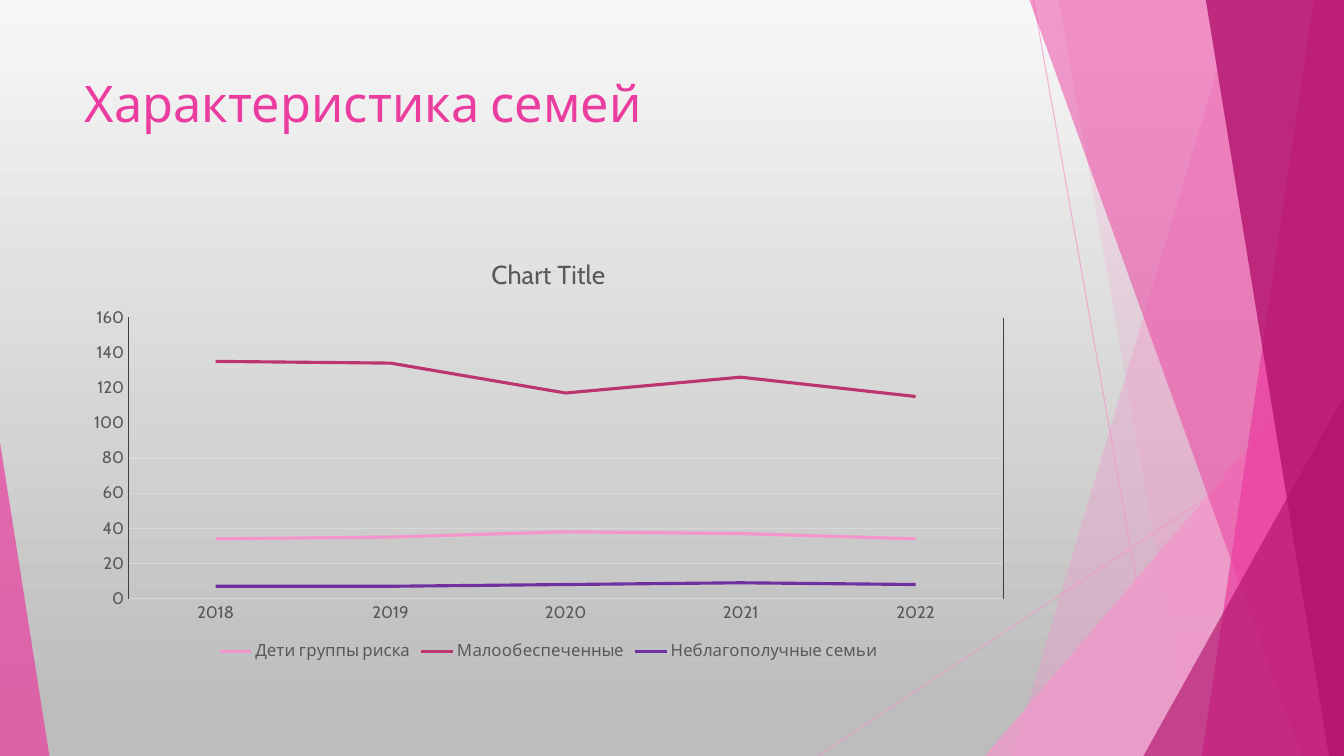
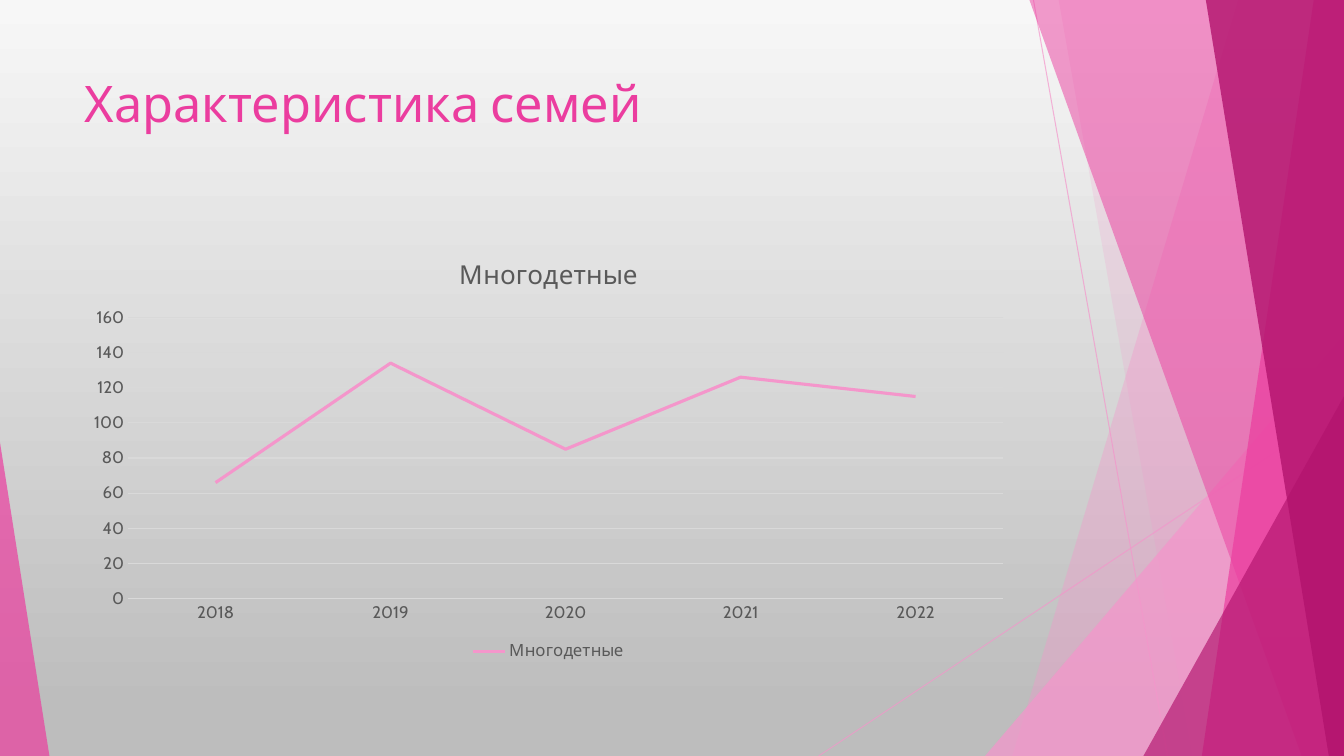
import pptx
import pptx.util
import pptx.dml.color
import pptx.chart.data
import pptx.enum.chart
import pptx.enum.shapes
import pptx.enum.text
import pptx.oxml.ns
from lxml import etree

Inches, Pt = pptx.util.Inches, pptx.util.Pt
qn = pptx.oxml.ns.qn

# Shared look
WIDTH, HEIGHT = 13.33, 7.5
FONT = "Cabin"
LIGHT, PINK, DARK = "F496CB", "EB3D9F", "B2136D"
GREY, GRID, EDGE = "595959", "D9D9D9", "404040"
BACKGROUND = [(0, "F7F7F7"), (0.94, "BDBDBD")]
TITLE_BOX = (0.74, 0.67, 9.4, 1.44)
CHART_BOX = (0.74, 2.36, 9.4, 4.24)
PLOT_BOX = (1.27, 3.15, 8.68, 2.79)

# Decoration: (from, to), (top x, bottom x, colour, alpha), (box, apex, colour, alpha)
RAYS = [((10.25, 0), (11.58, HEIGHT)), ((WIDTH, 4.03), (8.12, HEIGHT))]
BANDS_BACK = [(12.28, 10.04, LIGHT, 36), (10.5, 11.83, LIGHT, 20)]
BANDS_FRONT = [(10.21, 12.91, PINK, 50), (13.03, 11.92, PINK, 70),
               (11.96, 13.18, DARK, 80)]
TRIANGLE_BACK = ((9.77, 3.33, 3.56, 4.17), 1, LIGHT, 72)
TRIANGLES_FRONT = [((11.34, 3.93, 1.99, 3.57), 1, DARK, 66),
                   ((0, 4.39, 0.49, 3.11), 0, PINK, 70)]

# Content
YEARS = ["2018", "2019", "2020", "2021", "2022"]
PAGES = [
    {"title": "Характеристика семей", "chart_title": "Chart Title", "edges": True,
     "series": [("Дети группы риска", [34, 35, 38, 37, 34], LIGHT),
                ("Малообеспеченные", [135, 134, 117, 126, 115], "BC356F"),
                ("Неблагополучные семьи", [7, 7, 8, 9, 8], "7030A0")]},
    {"title": "Характеристика семей", "chart_title": "Многодетные", "edges": False,
     "series": [("Многодетные", [66, 134, 85, 126, 115], LIGHT)]},
]


def rgb(value):
    return pptx.dml.color.RGBColor.from_string(value)


def inches(values):
    return [Inches(value) for value in values]


def set_font(font, size, colour):
    font.name, font.size, font.bold = FONT, Pt(size), False
    font.color.rgb = rgb(colour)


def set_line(line, colour, width):
    line.color.rgb = rgb(colour)
    line.width = Pt(width)


def set_alpha(shape, percent):
    for colour in shape.element.iter(qn("a:srgbClr")):
        etree.SubElement(colour, qn("a:alpha")).set("val", str(percent * 1000))


def write(frame, text, size, colour, align=None):
    para = frame.paragraphs[0]
    para.alignment = align
    span = para.add_run()
    span.text = text
    set_font(span.font, size, colour)


def add_line(page, start, end, colour):
    line = page.shapes.add_connector(
        pptx.enum.shapes.MSO_CONNECTOR.STRAIGHT, *inches(start + end))
    set_line(line.line, colour, 0.75)
    etree.SubElement(line.element.spPr, qn("a:effectLst"))
    return line


def paint(shape, colour, alpha):
    shape.shadow.inherit = False
    shape.fill.solid()
    shape.fill.fore_color.rgb = rgb(colour)
    shape.line.fill.background()
    set_alpha(shape, alpha)
    return shape


def add_band(page, top, bottom, colour, alpha):
    """Fill everything between a slanted left side and the right slide edge."""
    outline = page.shapes.build_freeform(Inches(top), 0)
    corners = [(WIDTH, 0), (WIDTH, HEIGHT), (bottom, HEIGHT)]
    outline.add_line_segments([inches(corner) for corner in corners], close=True)
    return paint(outline.convert_to_shape(), colour, alpha)


def add_triangle(page, box, apex, colour, alpha):
    triangle = page.shapes.add_shape(
        pptx.enum.shapes.MSO_SHAPE.ISOSCELES_TRIANGLE, *inches(box))
    triangle.adjustments[0] = apex
    return paint(triangle, colour, alpha)


def decorate_master(deck, page):
    """Set the background and move the decoration to the slide master."""
    master = deck.slide_master
    fill = master.background.fill
    fill.gradient()
    fill.gradient_angle = 270
    for stop, (position, colour) in zip(fill.gradient_stops, BACKGROUND):
        stop.position = position
        stop.color.rgb = rgb(colour)

    parts = [add_line(page, start, end, LIGHT) for start, end in RAYS]
    for ray in parts:
        set_alpha(ray, 70)
    parts += [add_band(page, *band) for band in BANDS_BACK]
    parts.append(add_triangle(page, *TRIANGLE_BACK))
    parts += [add_band(page, *band) for band in BANDS_FRONT]
    parts += [add_triangle(page, *triangle) for triangle in TRIANGLES_FRONT]

    tree = master.shapes.element
    for index, part in enumerate(parts):
        next(part.element.iter(qn("p:cNvPr"))).set("id", str(100 + index))
        tree.insert(2 + index, part.element)


def add_title(page, text):
    title = page.shapes.title
    title.left, title.top, title.width, title.height = inches(TITLE_BOX)
    title.text_frame.word_wrap = True
    title.text_frame.vertical_anchor = pptx.enum.text.MSO_ANCHOR.TOP
    write(title.text_frame, text, 36, PINK, pptx.enum.text.PP_ALIGN.LEFT)


def place_plot(chart):
    """Fix the inner plot area as fractions of the chart box."""
    area = next(chart.element.iter(qn("c:plotArea")))
    for old in area.findall(qn("c:layout")):
        area.remove(old)
    layout = etree.Element(qn("c:layout"))
    manual = etree.SubElement(layout, qn("c:manualLayout"))
    left, top, width, height = CHART_BOX
    settings = [("layoutTarget", "inner"), ("xMode", "edge"), ("yMode", "edge"),
                ("x", (PLOT_BOX[0] - left) / width), ("y", (PLOT_BOX[1] - top) / height),
                ("w", PLOT_BOX[2] / width), ("h", PLOT_BOX[3] / height)]
    for tag, value in settings:
        etree.SubElement(manual, qn("c:" + tag)).set("val", str(value))
    area.insert(0, layout)


def add_line_chart(page, chart_title, series):
    kinds = pptx.enum.chart
    data = pptx.chart.data.CategoryChartData()
    data.categories = YEARS
    for name, values, _ in series:
        data.add_series(name, values)
    chart = page.shapes.add_chart(
        kinds.XL_CHART_TYPE.LINE, *inches(CHART_BOX), data).chart
    set_font(chart.font, 12, GREY)
    chart.has_title = True
    write(chart.chart_title.text_frame, chart_title, 18.6, GREY)
    chart.chart_title.include_in_layout = False
    chart.has_legend = True
    chart.legend.position = kinds.XL_LEGEND_POSITION.BOTTOM
    chart.legend.include_in_layout = False
    set_font(chart.legend.font, 12, GREY)

    for axis in (chart.category_axis, chart.value_axis):
        axis.major_tick_mark = axis.minor_tick_mark = kinds.XL_TICK_MARK.NONE
        set_font(axis.tick_labels.font, 12, GREY)
    set_line(chart.category_axis.format.line, GRID, 0.75)
    values_axis = chart.value_axis
    values_axis.minimum_scale, values_axis.maximum_scale = 0, 160
    values_axis.major_unit = 20
    values_axis.format.line.fill.background()
    values_axis.has_major_gridlines = True
    set_line(values_axis.major_gridlines.format.line, GRID, 0.75)

    plot = chart.plots[0]
    plot.vary_by_categories = False
    for line, (_, _, colour) in zip(plot.series, series):
        line.smooth = False
        set_line(line.format.line, colour, 2.25)
    place_plot(chart)
    return chart


def main():
    deck = pptx.Presentation()
    deck.slide_width, deck.slide_height = inches((WIDTH, HEIGHT))
    for number, content in enumerate(PAGES):
        page = deck.slides.add_slide(deck.slide_layouts[5])
        if number == 0:
            decorate_master(deck, page)
        add_title(page, content["title"])
        chart = add_line_chart(page, content["chart_title"], content["series"])
        if content["edges"]:
            # The value axis is the left edge; a line closes the right one
            set_line(chart.value_axis.format.line, EDGE, 0.75)
            left, top, width, height = PLOT_BOX
            right = left + width
            add_line(page, (right, top), (right, top + height), EDGE)
    deck.save("out.pptx")


if __name__ == "__main__":
    main()
